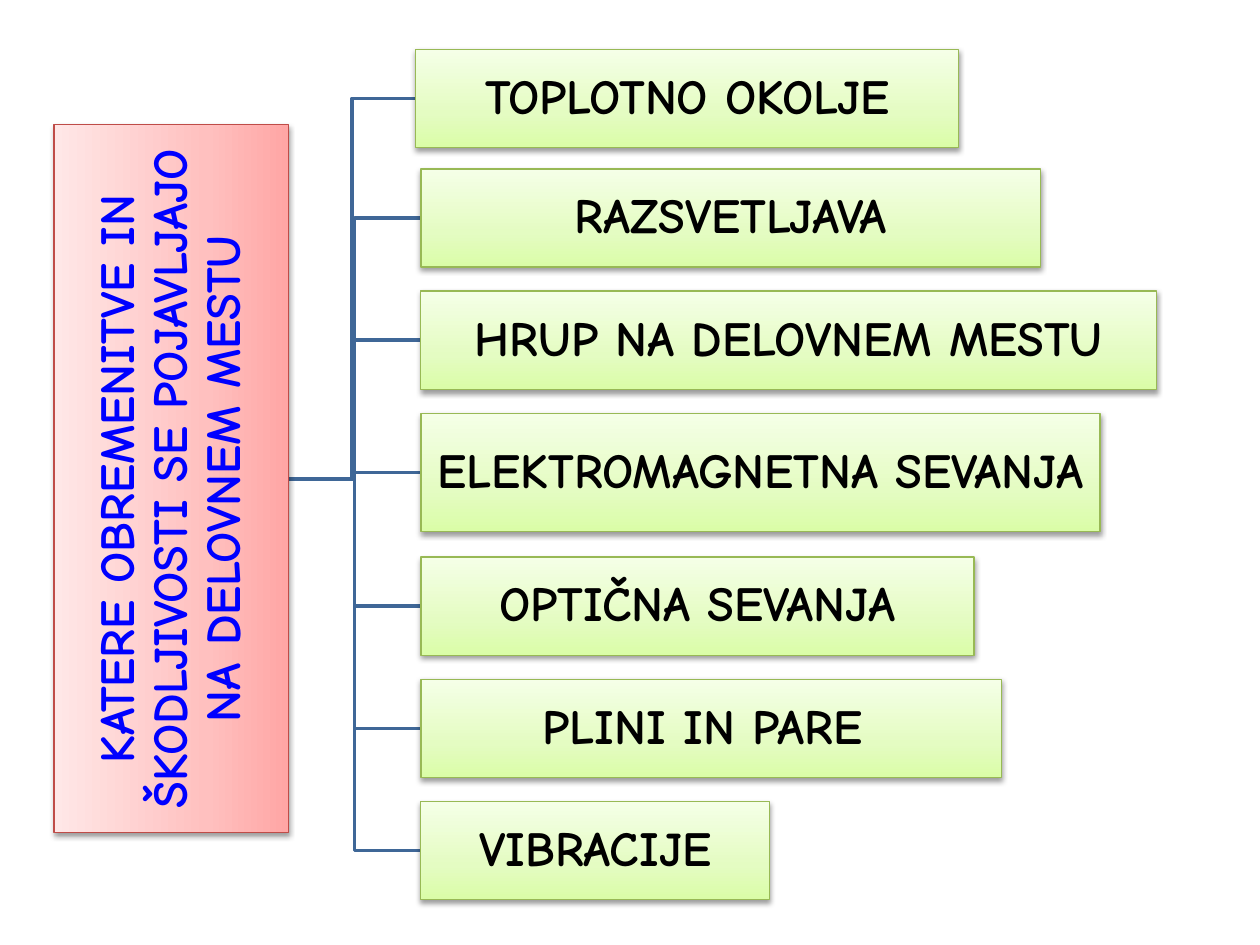
from copy import deepcopy

from lxml import etree
from pptx import Presentation
from pptx.dml.color import RGBColor
from pptx.enum.shapes import MSO_SHAPE
from pptx.enum.text import MSO_ANCHOR, PP_ALIGN
from pptx.oxml.ns import qn
from pptx.util import Inches, Pt

FONT = "Comic Neue"
BLACK = RGBColor(0x00, 0x00, 0x00)
BLUE = RGBColor(0x00, 0x00, 0xFF)
BRANCH_BLUE = RGBColor(0x3F, 0x67, 0x97)
RED_LINE = RGBColor(0xBF, 0x4C, 0x48)
RED_STOPS = [RGBColor(0xFF, 0xA6, 0xA5), RGBColor(0xFF, 0xC0, 0xBF), RGBColor(0xFF, 0xE7, 0xE7)]
GREEN_LINE = RGBColor(0x98, 0xB9, 0x55)
GREEN_STOPS = [RGBColor(0xDA, 0xFD, 0xA7), RGBColor(0xE4, 0xFC, 0xC2), RGBColor(0xF5, 0xFF, 0xE7)]
STOP_POSITIONS = [0, 0.35, 1]

QUESTION = "KATERE OBREMENITVE IN ŠKODLJIVOSTI SE POJAVLJAJO NA DELOVNEM MESTU"
QUESTION_BOX = (-1.45, 2.87, 5.62, 1.86)
TRUNK = (2.29, 3.8)
HAZARDS = [
    ("TOPLOTNO OKOLJE", (3.3, 0.39, 4.31, 0.78)),
    ("RAZSVETLJAVA", (3.34, 1.34, 4.92, 0.78)),
    ("HRUP NA DELOVNEM MESTU", (3.34, 2.31, 5.84, 0.78)),
    ("ELEKTROMAGNETNA SEVANJA", (3.34, 3.28, 5.39, 0.94)),
    ("OPTIČNA SEVANJA", (3.34, 4.42, 4.39, 0.78)),
    ("PLINI IN PARE ", (3.34, 5.39, 4.61, 0.78)),
    ("VIBRACIJE", (3.34, 6.36, 2.77, 0.78)),
]


def apply_gradient(shape, colors):
    """Fill a shape with a three-stop gradient rising from its bottom edge."""
    shape.fill.gradient()
    shape.fill.gradient_angle = 90
    first_stop = shape._element.spPr.find(".//" + qn("a:gs"))
    first_stop.addnext(deepcopy(first_stop))
    for stop, position, color in zip(shape.fill.gradient_stops, STOP_POSITIONS, colors):
        stop.position = position
        stop.color.rgb = color


def apply_shadow(shape):
    """Give a shape a soft black shadow just below it."""
    shape.shadow.inherit = False
    effects = shape._element.spPr.find(qn("a:effectLst"))
    shadow = etree.SubElement(
        effects, qn("a:outerShdw"), blurRad=str(Pt(3.1)), dist=str(Pt(1.6)), dir="5400000", rotWithShape="0"
    )
    color = etree.SubElement(shadow, qn("a:srgbClr"), val="000000")
    etree.SubElement(color, qn("a:alpha"), val="38000")


def add_box(slide, box, text, stops, line_color, text_color, rotation=0):
    """Add a shaded rectangle with centred bold text."""
    shape = slide.shapes.add_shape(MSO_SHAPE.RECTANGLE, *map(Inches, box))
    shape.rotation = rotation
    apply_gradient(shape, stops)
    shape.line.color.rgb = line_color
    shape.line.width = Pt(0.75)
    apply_shadow(shape)
    frame = shape.text_frame
    frame.word_wrap = True
    frame.vertical_anchor = MSO_ANCHOR.MIDDLE
    frame.margin_left = frame.margin_right = frame.margin_top = frame.margin_bottom = Inches(0.02)
    frame.text = text
    paragraph = frame.paragraphs[0]
    paragraph.alignment = PP_ALIGN.CENTER
    paragraph.line_spacing = 0.9
    paragraph.font.name = FONT
    paragraph.font.size = Pt(28)
    paragraph.font.bold = True
    paragraph.font.color.rgb = text_color


def add_branch(slide, box):
    """Draw the elbow line from the trunk to the left side of a box."""
    left, top, _, height = box
    trunk_x, trunk_y = TRUNK
    bend_x, middle_y = (trunk_x + left) / 2, top + height / 2
    points = [(bend_x, trunk_y), (bend_x, middle_y), (left, middle_y)]
    builder = slide.shapes.build_freeform(Inches(trunk_x), Inches(trunk_y))
    builder.add_line_segments([(Inches(x), Inches(y)) for x, y in points], close=False)
    branch = builder.convert_to_shape()
    branch.fill.background()
    branch.line.color.rgb = BRANCH_BLUE
    branch.line.width = Pt(2)
    branch.shadow.inherit = False


def add_hazard_tree(slide):
    """Lay out the question, its branches and the hazard boxes."""
    for _, box in reversed(HAZARDS):
        add_branch(slide, box)
    add_box(slide, QUESTION_BOX, QUESTION, RED_STOPS, RED_LINE, BLUE, rotation=270)
    for text, box in HAZARDS:
        add_box(slide, box, text, GREEN_STOPS, GREEN_LINE, BLACK)


def main():
    """Build and save the presentation."""
    presentation = Presentation()
    presentation.slide_width = Inches(10)
    presentation.slide_height = Inches(7.5)
    slide = presentation.slides.add_slide(presentation.slide_layouts[6])
    add_hazard_tree(slide)
    presentation.save("out.pptx")


if __name__ == "__main__":
    main()
